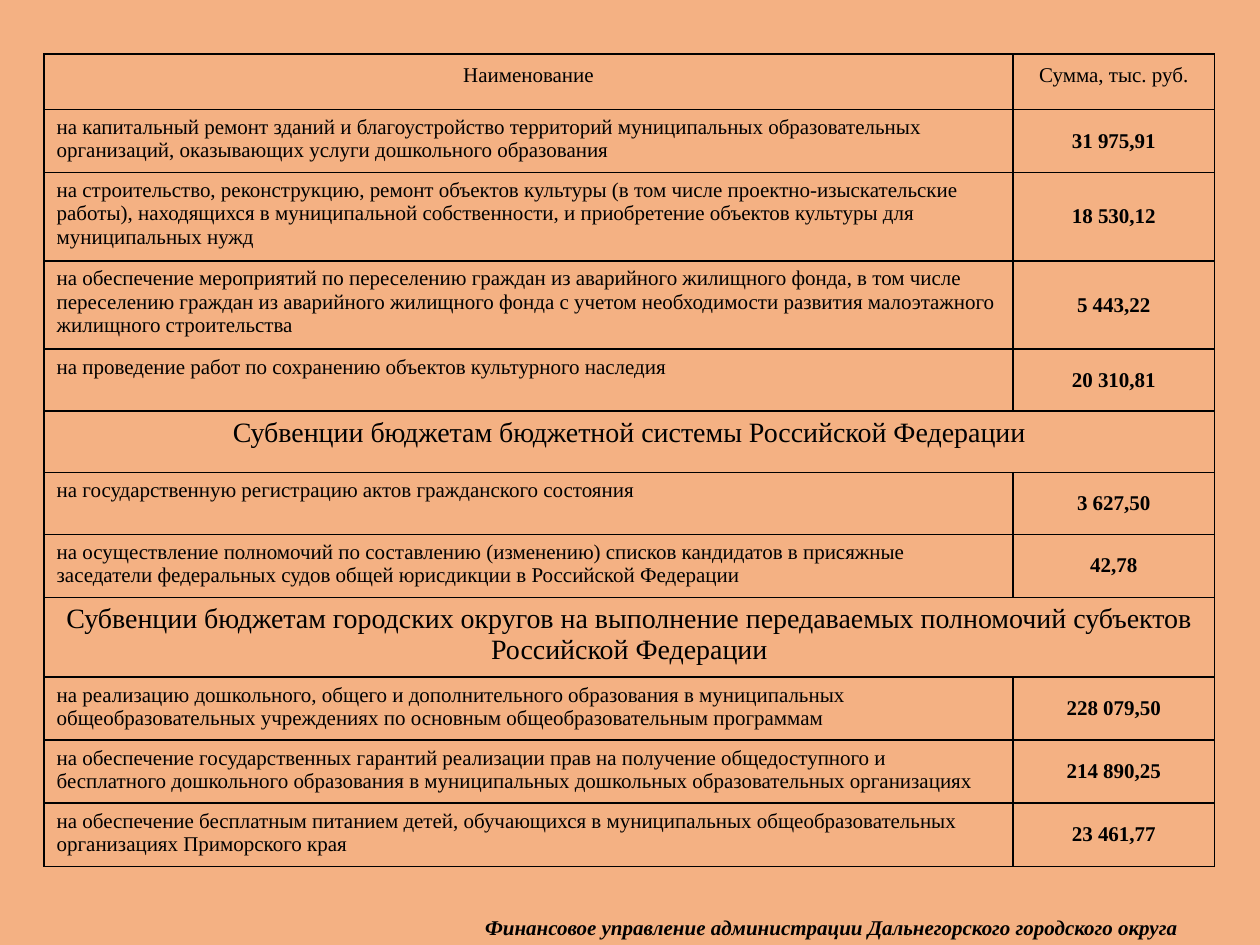
from pptx import Presentation
from pptx.dml.color import RGBColor
from pptx.enum.text import MSO_ANCHOR, MSO_AUTO_SIZE, PP_ALIGN
from pptx.oxml import parse_xml
from pptx.oxml.ns import nsdecls
from pptx.util import Inches, Pt

COLORS = {"back": "F4B183", "ink": "000000"}
HEAD = ("Наименование", "Сумма, тыс. руб.")
# A row without a sum is a section title across both columns.
ROWS = [
    ("на капитальный ремонт зданий и благоустройство территорий муниципальных образовательных "
     "организаций, оказывающих услуги дошкольного образования", "31 975,91"),
    ("на строительство, реконструкцию, ремонт объектов культуры (в том числе проектно-изыскательские "
     "работы), находящихся в муниципальной собственности, и приобретение объектов культуры для "
     "муниципальных нужд", "18 530,12"),
    ("на обеспечение мероприятий по переселению граждан из аварийного жилищного фонда, в том числе "
     "переселению граждан из аварийного жилищного фонда с учетом необходимости развития малоэтажного "
     "жилищного строительства", "5 443,22"),
    ("на проведение работ по сохранению объектов культурного наследия", "20 310,81"),
    ("Субвенции бюджетам бюджетной системы Российской Федерации", None),
    ("на государственную регистрацию актов гражданского состояния", "3 627,50"),
    ("на осуществление полномочий по составлению (изменению) списков кандидатов в присяжные "
     "заседатели федеральных судов общей юрисдикции в Российской Федерации", "42,78"),
    ("Субвенции бюджетам городских округов на выполнение передаваемых полномочий субъектов "
     "Российской Федерации", None),
    ("на реализацию дошкольного, общего и дополнительного образования в муниципальных "
     "общеобразовательных учреждениях по основным общеобразовательным программам", "228 079,50"),
    ("на обеспечение государственных гарантий реализации прав на получение общедоступного и "
     "бесплатного дошкольного образования в муниципальных дошкольных образовательных организациях",
     "214 890,25"),
    ("на обеспечение бесплатным питанием детей, обучающихся в муниципальных общеобразовательных "
     "организациях Приморского края", "23 461,77"),
]


class Page:
    def __init__(self, deck):
        self.slide = deck.slides.add_slide(deck.slide_layouts[6])
        fill = self.slide.background.fill
        fill.solid()
        fill.fore_color.rgb = RGBColor.from_string(COLORS["back"])
        self.font = {"name": "Times New Roman", "size": Pt(12), "bold": False, "italic": False}

    def label(self, frame, text, align=PP_ALIGN.LEFT, space=None, **style):
        """Put one styled run of text into a text frame."""
        para = frame.paragraphs[0]
        para.alignment = align
        para.line_spacing = space
        run = para.add_run()
        run.text = text
        for key, value in {**self.font, **style}.items():
            setattr(run.font, key, value)
        run.font.color.rgb = RGBColor.from_string(COLORS["ink"])

    def border(self, cell):
        """Draw a 1 pt line on all four sides and leave the cell unfilled."""
        props = cell._tc.get_or_add_tcPr()
        for side in ("lnL", "lnR", "lnT", "lnB"):
            props.append(parse_xml(
                f'<a:{side} {nsdecls("a")} w="{Pt(1)}"><a:solidFill>'
                f'<a:srgbClr val="{COLORS["ink"]}"/></a:solidFill></a:{side}>'))
        cell.fill.background()

    def table(self, left, top, width, height, cols):
        shape = self.slide.shapes.add_table(
            len(ROWS) + 1, len(cols), Inches(left), Inches(top), Inches(width), Inches(height))
        grid = shape.table
        grid.first_row = grid.horz_banding = False
        for col, size in zip(grid.columns, cols):
            col.width = Inches(size)
        for i, row in enumerate(grid.rows):
            row.height = Inches(0.49 if i else 0.44)
        shape.height = Inches(height)
        for cell in grid.iter_cells():
            self.border(cell)

        for i, text in enumerate(HEAD):
            self.label(grid.cell(0, i).text_frame, text, PP_ALIGN.CENTER, 1.15)
        for i, (name, total) in enumerate(ROWS, 1):
            first, last = grid.cell(i, 0), grid.cell(i, 1)
            if total is None:
                first.merge(last)
                self.label(first.text_frame, name, PP_ALIGN.CENTER, size=Pt(16))
            else:
                self.label(first.text_frame, name)
                self.label(last.text_frame, total, PP_ALIGN.CENTER, bold=True)
                last.vertical_anchor = MSO_ANCHOR.MIDDLE

    def text(self, left, top, width, height, text, inset, **style):
        box = self.slide.shapes.add_textbox(
            Inches(left), Inches(top), Inches(width), Inches(height))
        frame = box.text_frame
        frame.word_wrap = True
        frame.auto_size = MSO_AUTO_SIZE.SHAPE_TO_FIT_TEXT
        frame.margin_left = Inches(inset)
        self.label(frame, text, **style)


def main():
    deck = Presentation()
    deck.slide_width, deck.slide_height = Inches(10), Inches(7.5)
    page = Page(deck)
    page.text(3.44, 7.21, 6.05, 0.3,
              "Финансовое управление администрации Дальнегорского городского округа",
              0.41, bold=True, italic=True)
    page.table(0.35, 0.43, 9.29, 6.45, (7.69, 1.6))
    deck.save("out.pptx")


if __name__ == "__main__":
    main()
